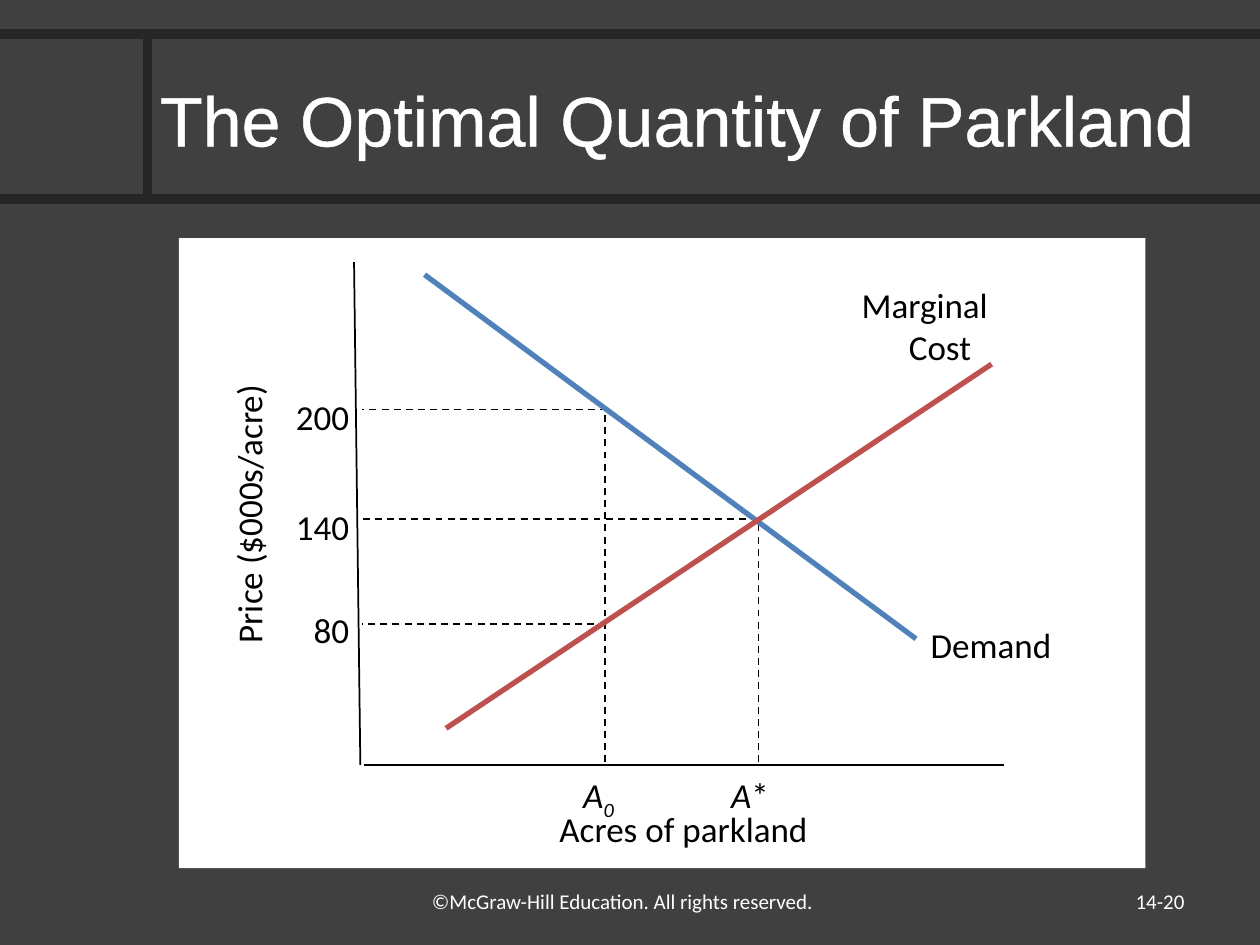
from lxml import etree
from pptx import Presentation
from pptx.dml.color import RGBColor
from pptx.enum.dml import MSO_LINE
from pptx.enum.shapes import MSO_CONNECTOR, MSO_SHAPE
from pptx.enum.text import MSO_ANCHOR, PP_ALIGN
from pptx.oxml.ns import qn
from pptx.util import Inches, Pt

WHITE, BLACK, GREY, DARK = "FFFFFF", "000000", "404040", "262626"
BLUE, RED = "4F81BD", "C0504D"
LABEL_HEIGHT = 0.44


def rgb(value):
    return RGBColor.from_string(value)


def add_line(page, start, end, color, width, dashed=False):
    line = page.shapes.add_connector(
        MSO_CONNECTOR.STRAIGHT, *[Inches(value) for value in (*start, *end)])
    line.line.color.rgb = rgb(color)
    line.line.width = Pt(width)
    if dashed:
        line.line.dash_style = MSO_LINE.DASH
    etree.SubElement(line._element.spPr, qn("a:effectLst"))
    return line


def style(para, size, color, align, font="Calibri"):
    para.alignment = align
    para.font.size = Pt(size)
    para.font.name = font
    para.font.color.rgb = rgb(color)


def add_text(page, box, lines, align=PP_ALIGN.CENTER, size=20, color=BLACK,
             anchor=MSO_ANCHOR.TOP):
    shape = page.shapes.add_textbox(*[Inches(value) for value in box])
    frame = shape.text_frame
    frame.word_wrap = True
    frame.vertical_anchor = anchor
    frame.text = lines
    for para in frame.paragraphs:
        style(para, size, color, align)
    return shape


def add_header(page, box, text):
    """Ruled band with a title to the right of the vertical rule."""
    left, top, width, height = box
    rule_x, right, bottom = left + 1.17, left + width, top + height
    for start, end in [((left, bottom), (right, bottom)),
                       ((rule_x, top), (rule_x, bottom)),
                       ((left, top), (right, top))]:
        add_line(page, start, end, DARK, 5.5)

    title = page.shapes.title
    title.left, title.top = Inches(rule_x), Inches(top + 0.03)
    title.width, title.height = Inches(right - rule_x), Inches(height - 0.03)
    frame = title.text_frame
    frame.text = text
    frame.vertical_anchor = MSO_ANCHOR.MIDDLE
    para = frame.paragraphs[0]
    style(para, 40, WHITE, PP_ALIGN.LEFT, "Arial")
    outline = etree.Element(qn("a:ln"), w=str(Pt(1.45)))
    fill = etree.SubElement(outline, qn("a:solidFill"))
    etree.SubElement(fill, qn("a:srgbClr"), val=WHITE)
    para.runs[0].font._element.insert(0, outline)


def add_graph(page, box):
    """Demand and marginal cost curves on a white panel."""
    left, top, width, height = box
    panel = page.shapes.add_shape(
        MSO_SHAPE.RECTANGLE, *[Inches(value) for value in box])
    panel.shadow.inherit = False
    panel.fill.solid()
    panel.fill.fore_color.rgb = rgb(WHITE)
    panel.line.fill.background()

    def line(start, end, color=BLACK, weight=1, dashed=False):
        add_line(page, (left + start[0], top + start[1]),
                 (left + end[0], top + end[1]), color, weight, dashed)

    def label(x, y, label_width, text, align=PP_ALIGN.CENTER,
              label_height=LABEL_HEIGHT):
        return add_text(page, (left + x, top + y, label_width, label_height),
                        text, align)

    base = 4.18
    label(1.4, 4.47, 5.21, "Acres of parkland")
    label(-1.46, 1.97, 4.03, "Price ($000s/acre)").rotation = 270
    line((1.47, base), (6.55, base))
    line((1.39, 0.19), (1.44, base))

    # Guides: quantity drop lines, then price levels
    for x, y in [(4.6, 2.23), (3.38, 1.34)]:
        line((x, base - 0.02), (x, y), dashed=True)
    for price, x, y, label_y in [("200", 3.4, 1.36, 1.2),
                                 ("140", 4.6, 2.23, 2.07),
                                 ("80", 3.39, 3.06, 2.89)]:
        line((x, y), (1.45, y), dashed=True)
        label(0.69, label_y, 0.76, price, PP_ALIGN.RIGHT)

    for x, mark in [(4.17, "*"), (2.94, "0")]:
        para = label(x, 4.2, 0.61, "A", PP_ALIGN.RIGHT).text_frame.paragraphs[0]
        para.runs[0].font.italic = True
        span = para.add_run()
        span.text = mark
        if mark == "0":
            span.font.italic = True
            span.font._element.set("baseline", "-25000")

    line((1.95, 0.29), (5.85, 3.18), BLUE, 3)
    label(5.77, 3.01, 1.35, "Demand")
    line((6.45, 1), (2.12, 3.89), RED, 3)
    cost = label(5.32, 0.31, 1.44, "Marginal\nCost", label_height=0.77)
    cost.text_frame.paragraphs[0].alignment = PP_ALIGN.LEFT


def add_footer(page, box):
    left, top, width, height = box
    add_text(page, (left, top + 0.05, 3.33, height - 0.05),
             "©McGraw-Hill Education. All rights reserved.",
             PP_ALIGN.LEFT, 12, WHITE)
    add_text(page, (left + width - 2.33, top, 2.33, height), "14-20",
             PP_ALIGN.RIGHT, 12, WHITE, MSO_ANCHOR.MIDDLE)


def main():
    deck = Presentation()
    deck.slide_width, deck.slide_height = Inches(10), Inches(7.5)
    page = deck.slides.add_slide(deck.slide_layouts[5])
    page.background.fill.solid()
    page.background.fill.fore_color.rgb = rgb(GREY)
    add_header(page, (0, 0.27, 10, 1.31), "The Optimal Quantity of Parkland")
    add_graph(page, (1.42, 1.89, 7.67, 5))
    add_footer(page, (3.33, 6.95, 6.17, 0.4))
    deck.save("out.pptx")


if __name__ == "__main__":
    main()
